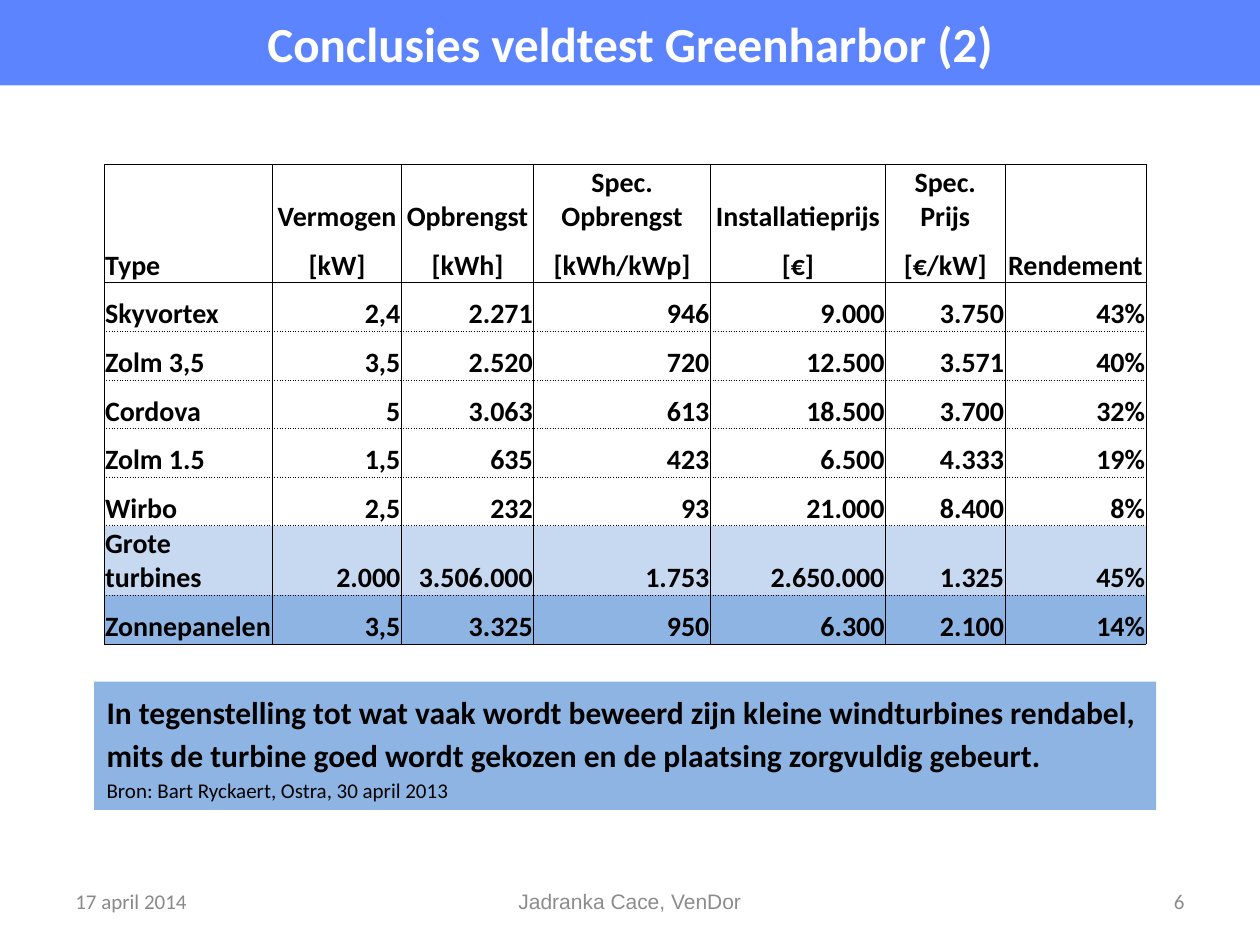
from lxml import etree
from pptx import Presentation
from pptx.dml.color import RGBColor
from pptx.enum.shapes import MSO_SHAPE
from pptx.enum.text import MSO_ANCHOR, PP_ALIGN
from pptx.oxml.ns import qn
from pptx.util import Cm, Pt

LEFT, CENTER, RIGHT = PP_ALIGN.LEFT, PP_ALIGN.CENTER, PP_ALIGN.RIGHT
MIDDLE, BOTTOM, TOP = MSO_ANCHOR.MIDDLE, MSO_ANCHOR.BOTTOM, MSO_ANCHOR.TOP
RECTANGLE = MSO_SHAPE.RECTANGLE

TITLE = "Conclusies veldtest Greenharbor (2)"
HEADER = [
    ["", "Vermogen", "Opbrengst", "Spec. Opbrengst", "Installatieprijs", "Spec. Prijs", ""],
    ["Type", "[kW]", "[kWh]", "[kWh/kWp]", "[€]", "[€/kW]", "Rendement"],
]
TURBINES = [
    ["Skyvortex", "2,4", "2.271", "946", "9.000", "3.750", "43%"],
    ["Zolm 3,5", "3,5", "2.520", "720", "12.500", "3.571", "40%"],
    ["Cordova", "5", "3.063", "613", "18.500", "3.700", "32%"],
    ["Zolm 1.5", "1,5", "635", "423", "6.500", "4.333", "19%"],
    ["Wirbo", "2,5", "232", "93", "21.000", "8.400", "8%"],
    ["Grote turbines", "2.000", "3.506.000", "1.753", "2.650.000", "1.325", "45%"],
    ["Zonnepanelen", "3,5", "3.325", "950", "6.300", "2.100", "14%"],
]
ROWS = HEADER + TURBINES
COLUMN_WIDTHS = [3.4, 2.59, 2.67, 3.56, 3.53, 2.41, 2.84]
ROW_HEIGHT = 0.98
ROW_FILLS = {"Grote turbines": "C6D9F1", "Zonnepanelen": "8EB4E3"}
CONCLUSION = (
    "In tegenstelling tot wat vaak wordt beweerd zijn kleine windturbines rendabel, "
    "mits de turbine goed wordt gekozen en de plaatsing zorgvuldig gebeurt."
)
CREDIT = "Bron: Bart Ryckaert, Ostra, 30 april 2013"
FOOTERS = [
    ("17 april 2014", 1.27, 5.93, LEFT, "Calibri", "898989"),
    ("Jadranka Cace, VenDor", 8.68, 8.04, CENTER, "Arial", "8C8C8C"),
    ("6", 18.2, 5.93, RIGHT, "Calibri", "8C8C8C"),
]


def color(value):
    """Turn a hex string into a colour."""
    return RGBColor.from_string(value)


def write(paragraph, text, size, align=LEFT, bold=False, ink="000000", font="Calibri"):
    """Fill a paragraph with text in one format."""
    paragraph.text = text
    paragraph.alignment = align
    paragraph.font.size = Pt(size)
    paragraph.font.name = font
    paragraph.font.bold = bold
    paragraph.font.color.rgb = color(ink)


def paint(shape, fill):
    """Give a shape a plain fill without line."""
    shape.fill.solid()
    shape.fill.fore_color.rgb = color(fill)
    shape.line.fill.background()
    shape.shadow.inherit = False


def line_below(row):
    """Name the dash of the line under a row; row -1 is the table's top edge."""
    if row == 0:
        return None
    return "solid" if row in (-1, 1, len(ROWS) - 1) else "dot"


def add_borders(cell, row):
    """Draw the four borders of a cell."""
    properties = cell._tc.get_or_add_tcPr()
    dashes = {"lnL": "solid", "lnR": "solid", "lnT": line_below(row - 1), "lnB": line_below(row)}
    for side, dash in dashes.items():
        line = etree.SubElement(properties, qn(f"a:{side}"), w=str(Pt(0.5)))
        if dash is None:
            etree.SubElement(line, qn("a:noFill"))
            continue
        fill = etree.SubElement(line, qn("a:solidFill"))
        etree.SubElement(fill, qn("a:srgbClr"), val="000000")
        etree.SubElement(line, qn("a:prstDash"), val=dash)


def add_title(slide):
    """Turn the title placeholder into the banner."""
    title = slide.shapes.title
    title.left, title.top, title.width, title.height = Cm(0), Cm(0), Cm(25.4), Cm(1.72)
    paint(title, "5D84FF")
    title.text_frame.vertical_anchor = MIDDLE
    write(title.text_frame.paragraphs[0], TITLE, 28, CENTER, True, "FFFFFF")


def add_results(slide):
    """Add the table of turbines."""
    frame = slide.shapes.add_table(
        len(ROWS), len(COLUMN_WIDTHS), Cm(2.1), Cm(3.32),
        Cm(sum(COLUMN_WIDTHS)), Cm(ROW_HEIGHT * len(ROWS)),
    )
    table = frame.table
    table.first_row = table.horz_banding = False
    for column, width in zip(table.columns, COLUMN_WIDTHS):
        column.width = Cm(width)
    for row, values in enumerate(ROWS):
        table.rows[row].height = Cm(ROW_HEIGHT)
        for column, text in enumerate(values):
            cell = table.cell(row, column)
            cell.margin_left = cell.margin_right = cell.margin_top = Cm(0.02)
            cell.margin_bottom = Cm(0)
            cell.vertical_anchor = BOTTOM
            add_borders(cell, row)
            if values[0] in ROW_FILLS:
                cell.fill.solid()
                cell.fill.fore_color.rgb = color(ROW_FILLS[values[0]])
            else:
                cell.fill.background()
            number_align = CENTER if row < len(HEADER) else RIGHT
            align = number_align if column else LEFT
            write(cell.text_frame.paragraphs[0], text, 16, align, True)


def add_conclusion(slide):
    """Add the conclusion with its credit line."""
    box = slide.shapes.add_shape(RECTANGLE, Cm(1.9), Cm(13.74), Cm(21.41), Cm(2.59))
    paint(box, "8EB4E3")
    frame = box.text_frame
    frame.word_wrap = True
    frame.vertical_anchor = TOP
    write(frame.paragraphs[0], CONCLUSION, 18, bold=True)
    write(frame.add_paragraph(), CREDIT, 12)
    for paragraph in frame.paragraphs:
        paragraph.line_spacing = 1.14


def add_footers(slide):
    """Add date, author and slide number."""
    for text, left, width, align, font, ink in FOOTERS:
        box = slide.shapes.add_textbox(Cm(left), Cm(17.65), Cm(width), Cm(1.02))
        box.text_frame.word_wrap = True
        box.text_frame.vertical_anchor = MIDDLE
        write(box.text_frame.paragraphs[0], text, 12, align, ink=ink, font=font)


def main():
    """Build and save the slide."""
    presentation = Presentation()
    presentation.slide_width, presentation.slide_height = Cm(25.4), Cm(19.05)
    slide = presentation.slides.add_slide(presentation.slide_layouts[5])
    add_results(slide)
    add_title(slide)
    add_footers(slide)
    add_conclusion(slide)
    presentation.save("out.pptx")


if __name__ == "__main__":
    main()
